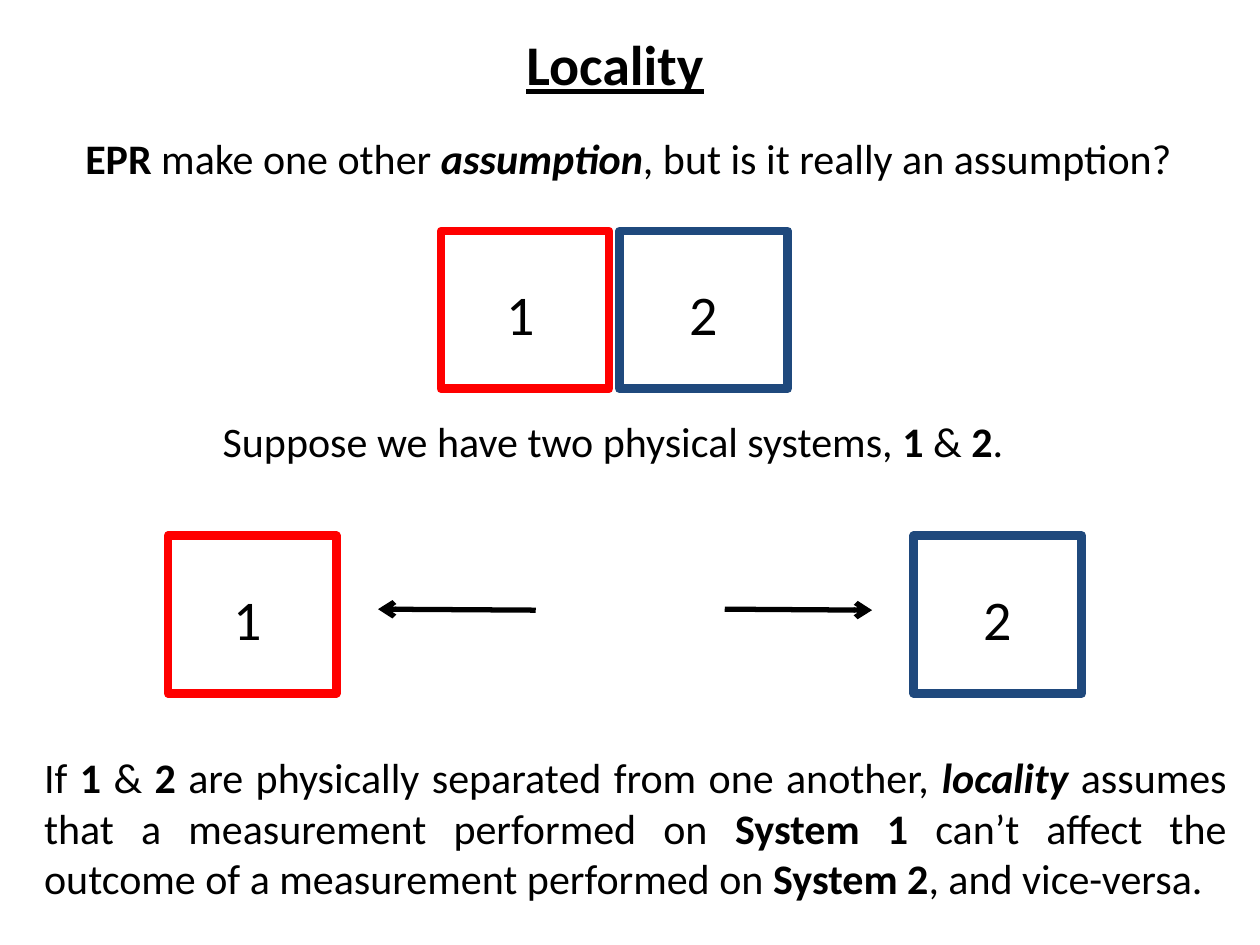
from dataclasses import dataclass

from lxml import etree
from pptx import Presentation
from pptx import util as u
from pptx.dml.color import RGBColor
from pptx.enum import shapes, text
from pptx.oxml import ns


@dataclass(frozen=True)
class Theme:
    font: str = "Calibri"
    ink: RGBColor = RGBColor(0, 0, 0)
    system_1: RGBColor = RGBColor(0xFF, 0, 0)
    system_2: RGBColor = RGBColor(0x1F, 0x49, 0x7D)
    large: int = 32
    body: int = 24
    frame: int = 5
    arrow: int = 3


@dataclass(frozen=True)
class Box:
    """A region of the slide, in centimetres."""
    left: float
    top: float
    width: float
    height: float

    def lengths(self):
        return [u.Cm(v) for v in (self.left, self.top, self.width, self.height)]


THEME = Theme()


def add_text(parent, box, runs, size, wrap=False, align=None):
    """Runs are (wording, style) pairs; style holds any of b, i and u."""
    caption = parent.add_textbox(*box.lengths())
    frame = caption.text_frame
    frame.word_wrap = wrap
    frame.auto_size = text.MSO_AUTO_SIZE.SHAPE_TO_FIT_TEXT
    paragraph = frame.paragraphs[0]
    paragraph.alignment = align
    for wording, style in runs:
        run = paragraph.add_run()
        run.text = wording
        font = run.font
        font.name, font.size = THEME.font, u.Pt(size)
        font.color.rgb = THEME.ink
        font.bold, font.italic = "b" in style, "i" in style
        font.underline = "u" in style


def add_system(parent, box, label, color, label_inset):
    square = parent.add_shape(shapes.MSO_SHAPE.RECTANGLE, *box.lengths())
    square.shadow.inherit = False
    square.fill.background()
    square.line.color.rgb = color
    square.line.width = u.Pt(THEME.frame)
    label_box = Box(box.left + label_inset, box.top + 0.85, 1.09, 1.63)
    add_text(parent, label_box, [(label, "")], THEME.large)


def add_arrow(parent, start, end):
    arrow = parent.add_connector(
        shapes.MSO_CONNECTOR.STRAIGHT, *[u.Cm(v) for v in (*start, *end)])
    arrow.line.color.rgb = THEME.ink
    arrow.line.width = u.Pt(THEME.arrow)
    line = arrow.line._get_or_add_ln()
    etree.SubElement(line, ns.qn("a:tailEnd"), type="arrow")
    etree.SubElement(arrow._element.spPr, ns.qn("a:effectLst"))


def add_system_pair(slide, box, separated=False):
    """System 1 at the left end of the box, system 2 at the right end."""
    parent = slide.shapes.add_group_shape().shapes
    side = 3.39
    right = box.left + box.width - side
    add_system(parent, Box(box.left, box.top, side, box.height),
               "1", THEME.system_1, 1.07)
    add_system(parent, Box(right, box.top, side, box.height),
               "2", THEME.system_2, 1.16)
    if separated:
        y = box.top + 1.48
        add_arrow(parent, (box.left + 7.41, y + 0.02), (box.left + 4.23, y))
        add_arrow(parent, (right - 3.81, y), (right - 0.84, y + 0.02))


def build_locality(slide):
    add_text(slide.shapes, Box(10.36, 0.48, 4.14, 1.63),
             [("Locality", "bu")], THEME.large)
    add_text(slide.shapes, Box(1.47, 2.54, 22.5, 1.27), [
        ("EPR", "b"), (" make one other ", ""), ("assumption", "bi"),
        (", but is it really an assumption?", "")], THEME.body)
    add_system_pair(slide, Box(8.89, 4.66, 6.99, 3.18))
    add_text(slide.shapes, Box(4.24, 8.26, 16.48, 1.27), [
        ("Suppose we have two physical systems, ", ""), ("1", "b"),
        (" & ", ""), ("2", "b"), (".", "")], THEME.body)
    add_system_pair(slide, Box(3.39, 10.8, 18.42, 3.18), separated=True)
    add_text(slide.shapes, Box(0.64, 15.03, 24.34, 3.33), [
        ("If ", ""), ("1", "b"), (" & ", ""), ("2", "b"),
        (" are physically separated from one another, ", ""),
        ("locality", "bi"),
        (" assumes that a measurement performed on ", ""),
        ("System 1", "b"),
        (" can’t affect the outcome of a measurement performed on ", ""),
        ("System 2", "b"), (", and vice-versa.", "")],
        THEME.body, wrap=True, align=text.PP_ALIGN.JUSTIFY)


def main():
    deck = Presentation()
    deck.slide_width, deck.slide_height = u.Cm(25.4), u.Cm(19.05)
    build_locality(deck.slides.add_slide(deck.slide_layouts[6]))
    deck.save("out.pptx")


if __name__ == "__main__":
    main()
